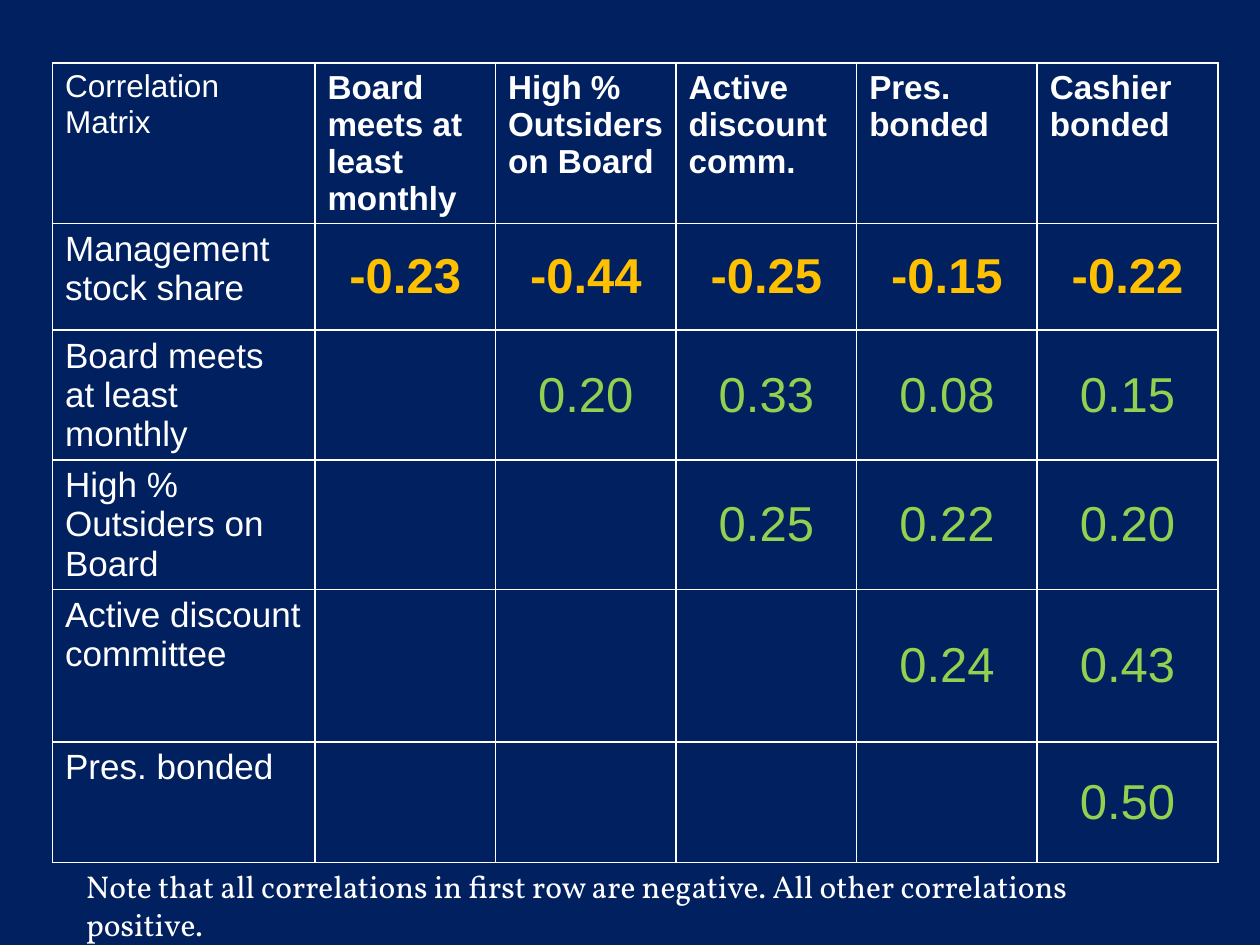
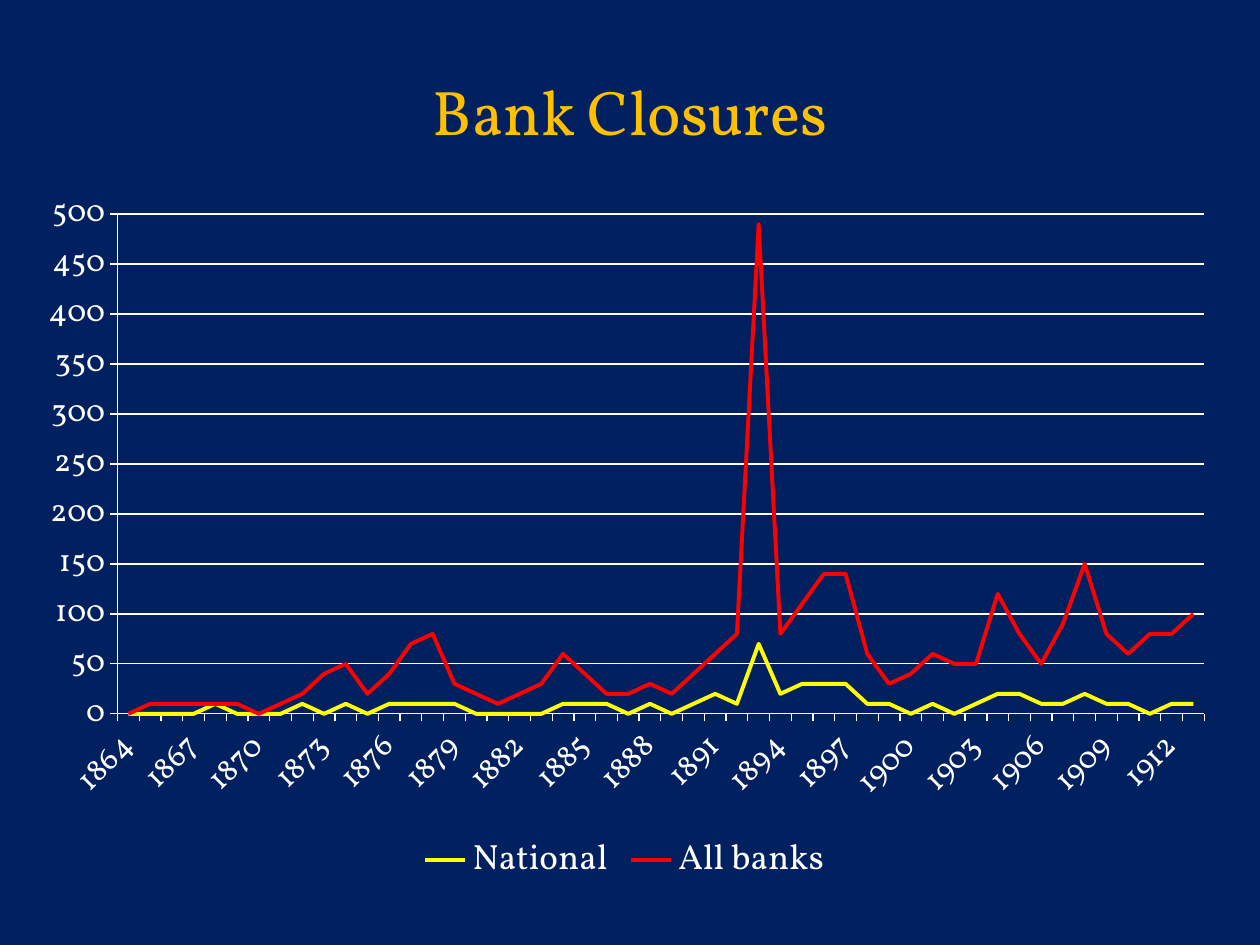
from lxml.etree import SubElement
from pptx import Presentation
from pptx.chart.data import CategoryChartData
from pptx.dml.color import RGBColor
from pptx.enum.chart import XL_CHART_TYPE, XL_LEGEND_POSITION, XL_TICK_MARK
from pptx.enum.text import MSO_ANCHOR, PP_ALIGN
from pptx.oxml import parse_xml
from pptx.oxml.ns import nsdecls, qn
from pptx.util import Pt

NAVY = RGBColor(0x00, 0x20, 0x60)
WHITE = RGBColor(0xFF, 0xFF, 0xFF)
GOLD = RGBColor(0xFF, 0xC0, 0x00)
GREEN = RGBColor(0x92, 0xD0, 0x50)
YELLOW = RGBColor(0xFF, 0xFF, 0x00)
RED = RGBColor(0xFF, 0x00, 0x00)
SERIF = "Vollkorn"
SANS = "Arial"

COLUMN_HEADS = ["Correlation\nMatrix", "Board meets at least monthly",
                "High % Outsiders on Board", "Active discount comm.",
                "Pres. bonded", "Cashier bonded"]
CORRELATIONS = {
    "Management stock share": ["-0.23", "-0.44", "-0.25", "-0.15", "-0.22"],
    "Board meets at least monthly": ["0.20", "0.33", "0.08", "0.15"],
    "High % Outsiders on Board": ["0.25", "0.22", "0.20"],
    "Active discount committee": ["0.24", "0.43"],
    "Pres. bonded": ["0.50"],
}
COLUMN_WIDTHS = [150] + [103.2] * 5
ROW_HEIGHTS = [91.5, 61, 74, 74, 87, 69]

YEARS = range(1864, 1914)
CLOSURES = {
    "National": (YELLOW, [
        0, 0, 0, 0, 10, 0, 0, 0, 10, 0, 10, 0, 10, 10, 10, 10, 0, 0, 0, 0,
        10, 10, 10, 0, 10, 0, 10, 20, 10, 70, 20, 30, 30, 30, 10, 10, 0, 10,
        0, 10, 20, 20, 10, 10, 20, 10, 10, 0, 10, 10]),
    "All banks": (RED, [
        0, 10, 10, 10, 10, 10, 0, 10, 20, 40, 50, 20, 40, 70, 80, 30, 20, 10,
        20, 30, 60, 40, 20, 20, 30, 20, 40, 60, 80, 490, 80, 110, 140, 140,
        60, 30, 40, 60, 50, 50, 120, 80, 50, 90, 150, 80, 60, 80, 80, 100]),
}


def style_font(font, size, color=WHITE, name=SERIF, bold=False):
    """Set the look of one font."""
    font.size = Pt(size)
    font.name = name
    font.bold = bold
    font.color.rgb = color


def write(frame, text, size, color=WHITE, name=SERIF, bold=False, align=PP_ALIGN.LEFT):
    """Fill a text frame and format all its runs."""
    frame.text = text
    for para in frame.paragraphs:
        para.alignment = align
        for span in para.runs:
            style_font(span.font, size, color, name, bold)


def place(shape, left, top, width, height):
    """Move and size a shape in points."""
    shape.left, shape.top = Pt(left), Pt(top)
    shape.width, shape.height = Pt(width), Pt(height)


def add_title(page, text):
    """Fill the title placeholder in the deck's title style."""
    title = page.shapes.title
    place(title, 36, 18, 648, 90)
    title.text_frame.vertical_anchor = MSO_ANCHOR.MIDDLE
    write(title.text_frame, text, 36, GOLD, align=PP_ALIGN.CENTER)


def add_note(page, text, left, top, width, height):
    """Add a wrapped text box."""
    frame = page.shapes.add_textbox(Pt(left), Pt(top), Pt(width), Pt(height)).text_frame
    frame.word_wrap = True
    write(frame, text, 18)


def frame_cell(cell):
    """Give a cell thin white borders and no fill."""
    properties = cell._tc.get_or_add_tcPr()
    for side in ("a:lnL", "a:lnR", "a:lnT", "a:lnB"):
        line = SubElement(properties, qn(side), w=str(Pt(1)))
        fill = SubElement(line, qn("a:solidFill"))
        SubElement(fill, qn("a:srgbClr"), val=str(WHITE))
    cell.fill.background()


def add_correlation_table(page):
    """Add the upper triangle of the correlation matrix."""
    table = page.shapes.add_table(
        len(ROW_HEIGHTS), len(COLUMN_WIDTHS), Pt(30), Pt(36),
        Pt(sum(COLUMN_WIDTHS)), Pt(sum(ROW_HEIGHTS))).table
    table.first_row = table.horz_banding = False
    for column, width in zip(table.columns, COLUMN_WIDTHS):
        column.width = Pt(width)
    for row, height in zip(table.rows, ROW_HEIGHTS):
        row.height = Pt(height)
    for cell in table.iter_cells():
        frame_cell(cell)
    for index, head in enumerate(COLUMN_HEADS):
        size = 19 if index else 18
        write(table.cell(0, index).text_frame, head, size, name=SANS, bold=index > 0)
    for row, (label, values) in enumerate(CORRELATIONS.items(), 1):
        write(table.cell(row, 0).text_frame, label, 20, name=SANS)
        for column, value in enumerate(values, row):
            negative = value.startswith("-")
            cell = table.cell(row, column)
            cell.vertical_anchor = MSO_ANCHOR.MIDDLE
            write(cell.text_frame, value, 28, GOLD if negative else GREEN,
                  SANS, negative, PP_ALIGN.CENTER)


def style_axis(axis):
    """Give an axis white lines, outside ticks and white labels."""
    axis.major_tick_mark = XL_TICK_MARK.OUTSIDE
    axis.minor_tick_mark = XL_TICK_MARK.NONE
    axis.format.line.color.rgb = WHITE
    axis.format.line.width = Pt(0.75)
    style_font(axis.tick_labels.font, 18)


def set_plot_layout(chart, x, y, w, h):
    """Fix the inner plot area as fractions of the chart."""
    plot_area = chart._chartSpace.chart.plotArea
    for layout in plot_area.findall(qn("c:layout")):
        plot_area.remove(layout)
    sizes = "".join(f'<c:{key} val="{value}"/>'
                    for key, value in (("x", x), ("y", y), ("w", w), ("h", h)))
    plot_area.insert(0, parse_xml(
        f'<c:layout {nsdecls("c")}><c:manualLayout><c:layoutTarget val="inner"/>'
        f'<c:xMode val="edge"/><c:yMode val="edge"/>{sizes}</c:manualLayout></c:layout>'))


def add_closures_chart(page):
    """Add the line chart of yearly bank closures."""
    data = CategoryChartData()
    data.categories = [str(year) for year in YEARS]
    for name, (_, values) in CLOSURES.items():
        data.add_series(name, values)
    chart = page.shapes.add_chart(
        XL_CHART_TYPE.LINE, Pt(12), Pt(102), Pt(690), Pt(408), data).chart
    style_font(chart.font, 10)
    chart.has_title = False
    chart.has_legend = True
    chart.legend.position = XL_LEGEND_POSITION.BOTTOM
    chart.legend.include_in_layout = False
    style_font(chart.legend.font, 20)
    chart.plots[0].vary_by_categories = False
    for series, (color, _) in zip(chart.plots[0].series, CLOSURES.values()):
        series.smooth = False
        series.format.line.color.rgb = color
        series.format.line.width = Pt(2.25)
    years, counts = chart.category_axis, chart.value_axis
    for axis in (years, counts):
        style_axis(axis)
    SubElement(years._element, qn("c:tickLblSkip"), val="3")
    skip = years._element[-1]
    years._element.find(qn("c:noMultiLvlLbl")).addprevious(skip)
    years._element.find(qn("c:txPr")).find(qn("a:bodyPr")).set("rot", "-2700000")
    counts.minimum_scale, counts.maximum_scale, counts.major_unit = 0, 500, 50
    counts.has_major_gridlines = True
    counts.major_gridlines.format.line.color.rgb = WHITE
    counts.major_gridlines.format.line.width = Pt(0.75)
    set_plot_layout(chart, 0.08, 0.05, 0.9, 0.7)


def main():
    """Build and save the deck."""
    deck = Presentation()
    deck.slide_width, deck.slide_height = Pt(720), Pt(540)
    background = deck.slide_master.background.fill
    background.solid()
    background.fore_color.rgb = NAVY

    matrix_page = deck.slides.add_slide(deck.slide_layouts[6])
    add_correlation_table(matrix_page)
    add_note(matrix_page, "Note that all correlations in first row are negative. "
             "All other correlations positive.", 42, 492, 639, 29)

    closures_page = deck.slides.add_slide(deck.slide_layouts[5])
    add_title(closures_page, "Bank Closures")
    add_closures_chart(closures_page)
    deck.save("out.pptx")


if __name__ == "__main__":
    main()
